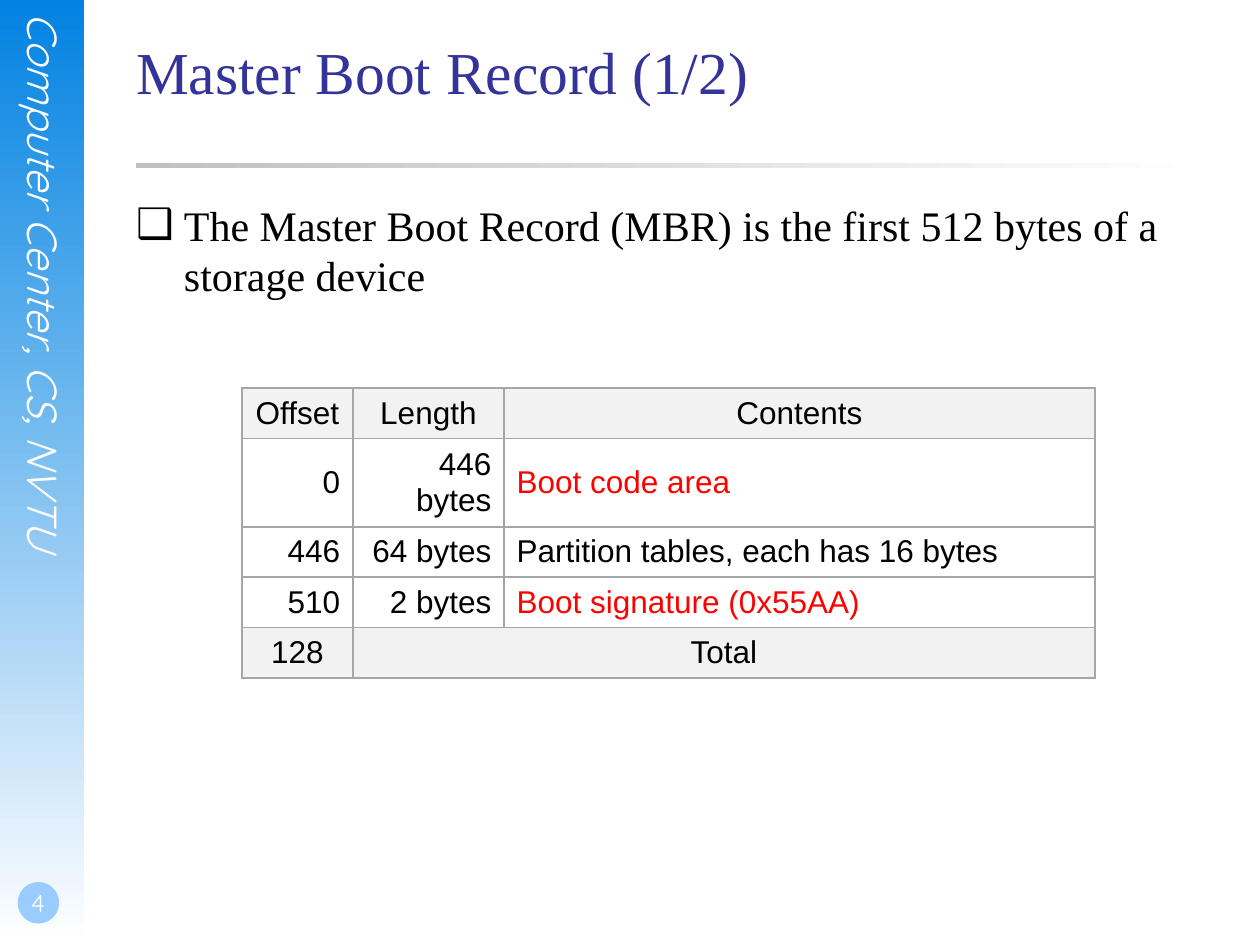
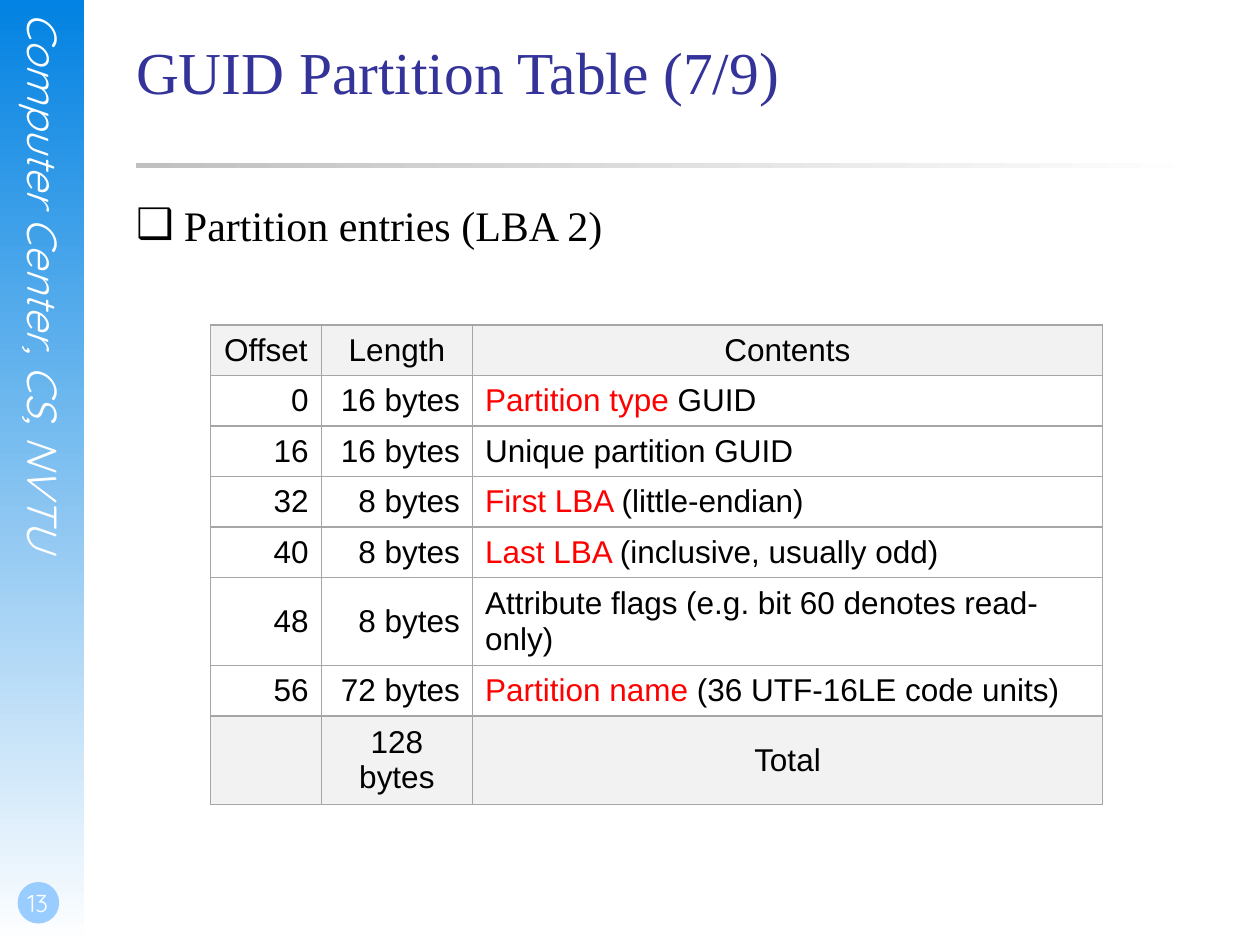
import pptx
import pptx.dml.color
import pptx.enum.shapes
import pptx.enum.text
import pptx.oxml
import pptx.oxml.ns
import pptx.util
from pptx.util import Inches

ALIGN = pptx.enum.text.PP_ALIGN
ANCHOR = pptx.enum.text.MSO_ANCHOR
SHAPE = pptx.enum.shapes.MSO_SHAPE

# Shared style
WHITE, BLACK, RED = "FFFFFF", "000000", "FF0000"
BAND_BLUE, BADGE_BLUE, TITLE_BLUE = "0282E2", "99CCFF", "333399"
RULE_GREY, CELL_GREY, BORDER_GREY = "C0C0C0", "F2F2F2", "A6A6A6"
SERIF, SANS, BAND_FONT = "Times New Roman", "Arial", "Quicksand"
BAND_TEXT = "Computer Center, CS, NVTU"

# Boxes: left, top, width, height in inches
BAND_BOX = (0, 0, 0.67, 7.5)
TITLE_BOX = (1.08, 0.28, 8.5, 1.25)
RULE_BOX = (1.08, 1.29, 8.5, 0.04)
BODY_BOX = (1.08, 1.58, 8.5, 5.08)
ROW_HEIGHT = 0.4

HEADER = ["Offset", "Length", "Contents"]


def color(value):
    return pptx.dml.color.RGBColor.from_string(value)


def inches(box):
    return [Inches(value) for value in box]


def format_run(run, size, font, text_color, italic=None):
    run.font.size = pptx.util.Pt(size)
    run.font.name = font
    run.font.color.rgb = color(text_color)
    run.font.italic = italic


def set_margins(text_frame, left=0, top=0, right=0, bottom=0):
    text_frame.margin_left, text_frame.margin_top = Inches(left), Inches(top)
    text_frame.margin_right, text_frame.margin_bottom = Inches(right), Inches(bottom)


def add_plain_shape(slide, kind, box):
    shape = slide.shapes.add_shape(kind, *inches(box))
    shape.shadow.inherit = False
    shape.line.fill.background()
    return shape


def add_gradient_bar(slide, box, start_color, angle):
    bar = add_plain_shape(slide, SHAPE.RECTANGLE, box)
    bar.fill.gradient()
    bar.fill.gradient_angle = angle
    for stop, value in zip(bar.fill.gradient_stops, (start_color, WHITE)):
        stop.color.rgb = color(value)


def add_band_text(slide, box, text, size, italic=None):
    text_box = slide.shapes.add_textbox(*inches(box))
    text_frame = text_box.text_frame
    text_frame.word_wrap = True
    set_margins(text_frame)
    text_frame.text = text
    format_run(text_frame.paragraphs[0].runs[0], size, BAND_FONT, WHITE, italic)
    return text_box


def add_band(slide, box, number):
    """Side band with vertical lettering and the page badge."""
    left, top, width, height = box
    add_gradient_bar(slide, box, BAND_BLUE, 270)

    lettering = add_band_text(slide, (left + 0.15, top + 0.1, 0.4, 5.11), BAND_TEXT, 24, True)
    body_properties = lettering.element.find(".//" + pptx.oxml.ns.qn("a:bodyPr"))
    body_properties.set("vert", "eaVert")

    bottom = top + height
    badge = add_plain_shape(slide, SHAPE.OVAL, (left + 0.14, bottom - 0.5, 0.33, 0.33))
    badge.fill.solid()
    badge.fill.fore_color.rgb = color(BADGE_BLUE)
    page = add_band_text(slide, (left, bottom - 0.67, 0.58, 0.5), str(number), 14)
    page.text_frame.vertical_anchor = ANCHOR.BOTTOM
    set_margins(page.text_frame, left=0.02, bottom=0.05)
    page.text_frame.paragraphs[0].alignment = ALIGN.CENTER


def fill_placeholder(placeholder, box, text, size, text_color):
    placeholder.left, placeholder.top, placeholder.width, placeholder.height = inches(box)
    text_frame = placeholder.text_frame
    text_frame.text = text
    text_frame.word_wrap = True
    text_frame.auto_size = pptx.enum.text.MSO_AUTO_SIZE.NONE
    text_frame.vertical_anchor = ANCHOR.TOP
    set_margins(text_frame)
    paragraph = text_frame.paragraphs[0]
    paragraph.alignment = ALIGN.LEFT
    format_run(paragraph.runs[0], size, SERIF, text_color)
    return paragraph


def add_bullet(paragraph, character, indent):
    paragraph.space_before = pptx.util.Pt(6)
    properties = paragraph.runs[0].font._element.getparent().getparent().get_or_add_pPr()
    properties.set("marL", str(Inches(indent)))
    properties.set("indent", str(-Inches(indent)))
    bullet = pptx.oxml.parse_xml(
        f'<a:buChar {pptx.oxml.ns.nsdecls("a")} char="{character}"/>')
    properties.append(bullet)


def add_borders(cell):
    properties = cell._tc.get_or_add_tcPr()
    for side in "LRTB":
        properties.append(pptx.oxml.parse_xml(
            f'<a:ln{side} {pptx.oxml.ns.nsdecls("a")} w="12700"><a:solidFill>'
            f'<a:srgbClr val="{BORDER_GREY}"/></a:solidFill></a:ln{side}>'))


def fill_cell(cell, content, alignment, fill_color):
    """Content is a string, or a pair: a red part and the black rest."""
    add_borders(cell)
    cell.fill.solid()
    cell.fill.fore_color.rgb = color(fill_color)
    cell.vertical_anchor = ANCHOR.MIDDLE
    paragraph = cell.text_frame.paragraphs[0]
    paragraph.alignment = alignment
    red_part, black_part = ("", content) if isinstance(content, str) else content
    for text, text_color in ((red_part, RED), (black_part, BLACK)):
        if text:
            run = paragraph.add_run()
            run.text = text
            format_run(run, 18, SANS, text_color)


def add_layout_table(slide, left, top, widths, rows, merge_total):
    """Byte layout table with a grey heading row and a grey total row."""
    rows = [HEADER] + rows
    box = (left, top, sum(widths), ROW_HEIGHT * len(rows))
    table = slide.shapes.add_table(len(rows), len(widths), *inches(box)).table
    table.first_row = table.horz_banding = False
    for column, width in zip(table.columns, widths):
        column.width = Inches(width)
    for row_index, row in enumerate(rows):
        table.rows[row_index].height = Inches(ROW_HEIGHT)
        grey = row_index in (0, len(rows) - 1)
        for column_index, content in enumerate(row):
            alignment = ALIGN.LEFT if column_index == 2 else ALIGN.RIGHT
            fill_cell(table.cell(row_index, column_index), content,
                      ALIGN.CENTER if grey else alignment,
                      CELL_GREY if grey else WHITE)
    if merge_total:
        last = len(rows) - 1
        table.cell(last, 1).merge(table.cell(last, 2))


def add_table_slide(presentation, number, title, bullet_text, **table_options):
    slide = presentation.slides.add_slide(presentation.slide_layouts[1])
    add_band(slide, BAND_BOX, number)
    add_gradient_bar(slide, RULE_BOX, RULE_GREY, 0)
    fill_placeholder(slide.shapes.title, TITLE_BOX, title, 34, TITLE_BLUE)
    paragraph = fill_placeholder(slide.placeholders[1], BODY_BOX, bullet_text, 24, BLACK)
    add_bullet(paragraph, "❑", 0.38)
    add_layout_table(slide, **table_options)


def main():
    presentation = pptx.Presentation()
    presentation.slide_width, presentation.slide_height = Inches(10), Inches(7.5)

    add_table_slide(
        presentation, 4, "Master Boot Record (1/2)",
        "The Master Boot Record (MBR) is the first 512 bytes of a storage device",
        left=1.92, top=3.08, widths=[0.88, 1.2, 4.69], merge_total=True,
        rows=[
            ["0", "446 bytes", ("Boot code area", "")],
            ["446", "64 bytes", "Partition tables, each has 16 bytes"],
            ["510", "2 bytes", ("Boot signature (0x55AA)", "")],
            ["128", "Total", ""],
        ])

    add_table_slide(
        presentation, 13, "GUID Partition Table (7/9)", "Partition entries (LBA 2)",
        left=1.67, top=2.58, widths=[0.88, 1.2, 5], merge_total=False,
        rows=[
            ["0", "16 bytes", ("Partition type ", "GUID")],
            ["16", "16 bytes", "Unique partition GUID"],
            ["32", "8 bytes", ("First LBA ", "(little-endian)")],
            ["40", "8 bytes", ("Last LBA ", "(inclusive, usually odd)")],
            ["48", "8 bytes", "Attribute flags (e.g. bit 60 denotes read-only)"],
            ["56", "72 bytes", ("Partition name ", "(36 UTF-16LE code units)")],
            ["", "128 bytes", "Total"],
        ])

    presentation.save("out.pptx")


if __name__ == "__main__":
    main()
